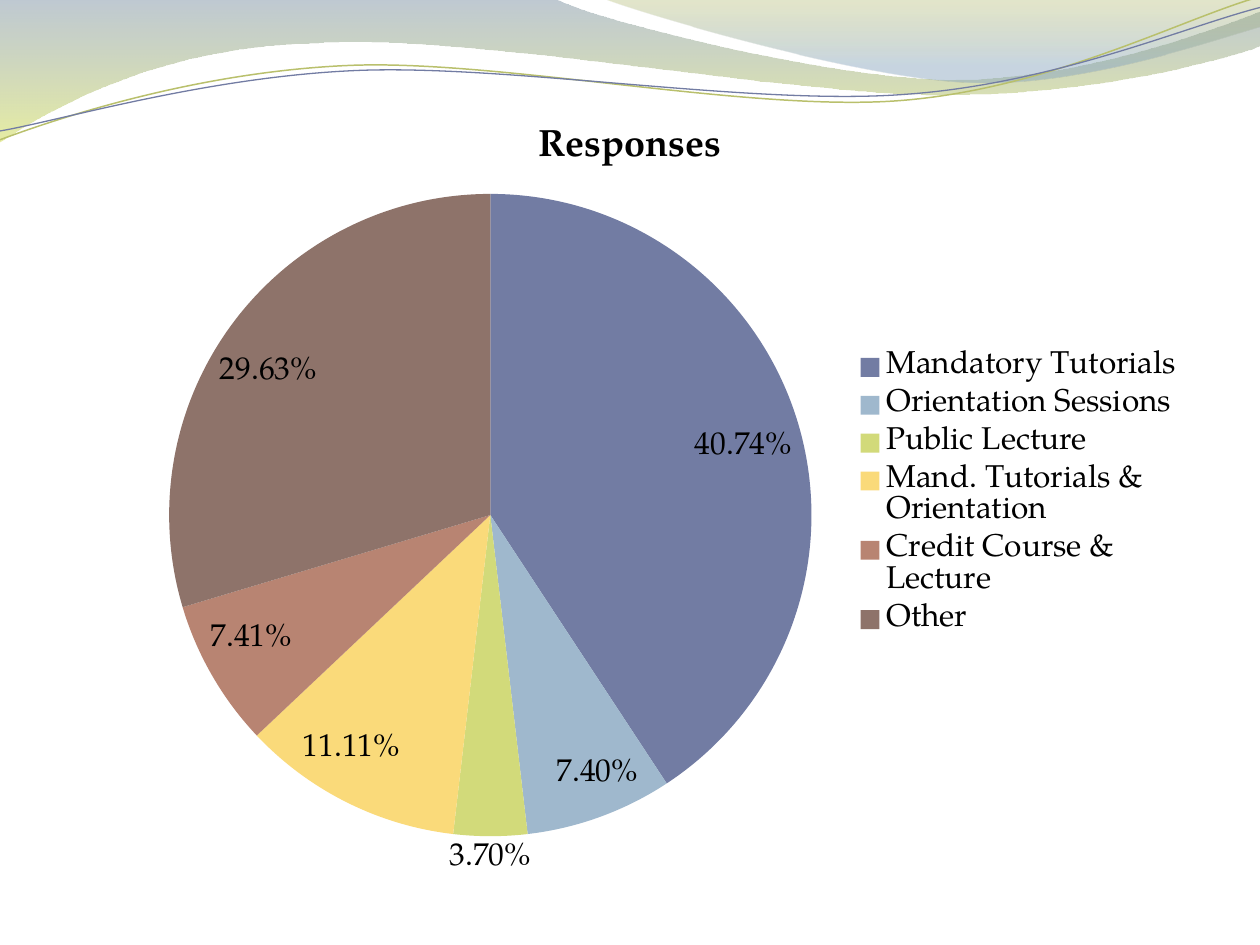
from copy import deepcopy
from math import cos, radians, sin
from lxml import etree
from pptx import Presentation
from pptx.chart.data import CategoryChartData
from pptx.dml.color import RGBColor
from pptx.enum.chart import XL_CHART_TYPE, XL_LABEL_POSITION, XL_LEGEND_POSITION
from pptx.oxml import parse_xml
from pptx.oxml.ns import nsdecls, qn
from pptx.util import Cm, Pt

FONT = "TeX Gyre Pagella"
BLACK = RGBColor(0x00, 0x00, 0x00)
SLATE = RGBColor(0x72, 0x88, 0x9B)
LIME = RGBColor(0xD3, 0xDE, 0x57)
OLIVE = RGBColor(0xA4, 0xAC, 0x50)
SKY = RGBColor(0x84, 0xA3, 0xBD)
MOSS = RGBColor(0xB9, 0xC0, 0x6C)
INDIGO = RGBColor(0x72, 0x7C, 0xA3)
SLICES = [
    ("Mandatory Tutorials", 0.4074, INDIGO),
    ("Orientation Sessions", 0.074, RGBColor(0x9F, 0xB8, 0xCD)),
    ("Public Lecture", 0.037, RGBColor(0xD2, 0xDA, 0x7A)),
    ("Mand. Tutorials & Orientation", 0.1111, RGBColor(0xFA, 0xDA, 0x7A)),
    ("Credit Course & Lecture", 0.0741, RGBColor(0xB8, 0x84, 0x72)),
    ("Other", 0.2963, RGBColor(0x8E, 0x73, 0x6A)),
]
CM_PER_INCH = 2.54
TILT = 2.7
PIVOT_X, PIVOT_Y = 5, 0.57

prs = Presentation()
prs.slide_width, prs.slide_height = Cm(25.4), Cm(19.05)
s = prs.slides.add_slide(prs.slide_layouts[6])


def place(x, y, tilt):
    a, dx, dy = radians(tilt), x - PIVOT_X, y - PIVOT_Y
    x, y = PIVOT_X + dx * cos(a) - dy * sin(a), PIVOT_Y + dx * sin(a) + dy * cos(a)
    return Cm(x * CM_PER_INCH), Cm(y * CM_PER_INCH)


def add_wave(shapes, start, segments, close, tilt=0):
    segments = [[place(x, y, tilt) for x, y in zip(seg[::2], seg[1::2])] for seg in segments]
    fb = shapes.build_freeform(*place(*start, tilt))
    fb.add_line_segments([seg[-1] for seg in segments], close=close)
    sp = fb.convert_to_shape()
    for node, seg in zip(list(sp.element.iter(qn("a:lnTo"))), segments):
        if len(seg) == 3:
            node.tag = qn("a:cubicBezTo")
            for i, (x, y) in enumerate(seg[:2]):
                pt = deepcopy(node[-1])
                pt.set("x", str(x - sp.left))
                pt.set("y", str(y - sp.top))
                node.insert(i, pt)
    sp.rotation = -tilt
    sp.shadow.inherit = False
    return sp


bands = [
    ((0, 0), [
        (4.4, -0.01), (4.76, 0.17, 6.64, 0.63, 7.58, 0.63), (8.53, 0.63, 9.58, 0.26, 10, 0.09),
        (10.01, 0.36), (9.83, 0.44, 8.7, 0.76, 7.46, 0.75), (6.22, 0.75, 3.82, 0.28, 2.57, 0.34),
        (1.29, 0.36, 0.46, 0.83, -0.01, 1.13)],
     [(0, SLATE, 45), (1, LIME, 55)]),
    ((4.79, -0.01), [
        (5.09, 0.11, 6.82, 0.62, 7.69, 0.65), (8.56, 0.69, 9.61, 0.32, 10, 0.21), (10, 0)],
     [(0, OLIVE, 30), (0.8, SKY, 45)]),
]
for start, segments, stops in bands:
    sp = add_wave(s.shapes, start, segments, True)
    sp.line.fill.background()
    sp.fill.gradient()
    sp.fill.gradient_angle = 270
    for stop, (position, color, _) in zip(sp.fill.gradient_stops, stops):
        stop.position = position
        stop.color.rgb = color
    for clr, (_, _, opacity) in zip(sp.element.spPr.iter(qn("a:srgbClr")), stops):
        etree.SubElement(clr, qn("a:alpha")).set("val", str(opacity * 1000))

lines = [
    ((0, 1.11), [
        (0.48, 0.93, 1.58, 0.57, 2.77, 0.52), (3.95, 0.47, 5.93, 0.89, 7.13, 0.8),
        (8.33, 0.71, 9.38, 0.15, 9.98, -0.02)], MOSS, 0.85),
    ((0, 1.04), [
        (0.47, 0.96, 1.64, 0.61, 2.83, 0.56), (4.03, 0.51, 5.97, 0.84, 7.17, 0.75),
        (8.36, 0.67, 9.41, 0.21, 10, 0.06)], INDIGO, 0.75),
]
group = s.shapes.add_group_shape()
for start, segments, color, width in lines:
    sp = add_wave(group.shapes, start, segments, False, TILT)
    sp.fill.background()
    sp.line.color.rgb = color
    sp.line.width = Pt(width)

data = CategoryChartData(number_format="0.00%")
data.categories = [name for name, _, _ in SLICES]
data.add_series("Responses", [value for _, value, _ in SLICES])
chart_w, chart_h = Cm(22.86), Cm(16.08)
chart = s.shapes.add_chart(
    XL_CHART_TYPE.PIE, Cm(1.27), Cm(1.91), chart_w, chart_h, data).chart
chart.font.name = FONT
chart.font.size = Pt(18)
chart.font.color.rgb = BLACK

chart.has_title = True
p = chart.chart_title.text_frame.paragraphs[0]
p.text = "Responses"
p.font.name = FONT
p.font.size = Pt(21.6)
p.font.bold = True
p.font.color.rgb = BLACK

chart.has_legend = True
chart.legend.position = XL_LEGEND_POSITION.RIGHT
chart.legend.include_in_layout = False

plot = chart.plots[0]
plot.vary_by_categories = True
for i, (_, _, color) in enumerate(SLICES):
    fill = plot.series[0].points[i].format.fill
    fill.solid()
    fill.fore_color.rgb = color

plot.has_data_labels = True
labels = plot.data_labels
labels.show_value = True
labels.show_percentage = False
labels.number_format = "0.00%"
labels.number_format_is_linked = False
labels.position = XL_LABEL_POSITION.BEST_FIT

diameter = Cm(12.95)
area = chart.element.chart.plotArea
for old in area.findall(qn("c:layout")):
    area.remove(old)
area.insert(0, parse_xml(
    f'<c:layout {nsdecls("c")}><c:manualLayout><c:layoutTarget val="inner"/>'
    '<c:xMode val="edge"/><c:yMode val="edge"/>'
    f'<c:x val="{Cm(2.14) / chart_w}"/><c:y val="{Cm(2) / chart_h}"/>'
    f'<c:w val="{diameter / chart_w}"/><c:h val="{diameter / chart_h}"/>'
    '</c:manualLayout></c:layout>'))

prs.save("out.pptx")
